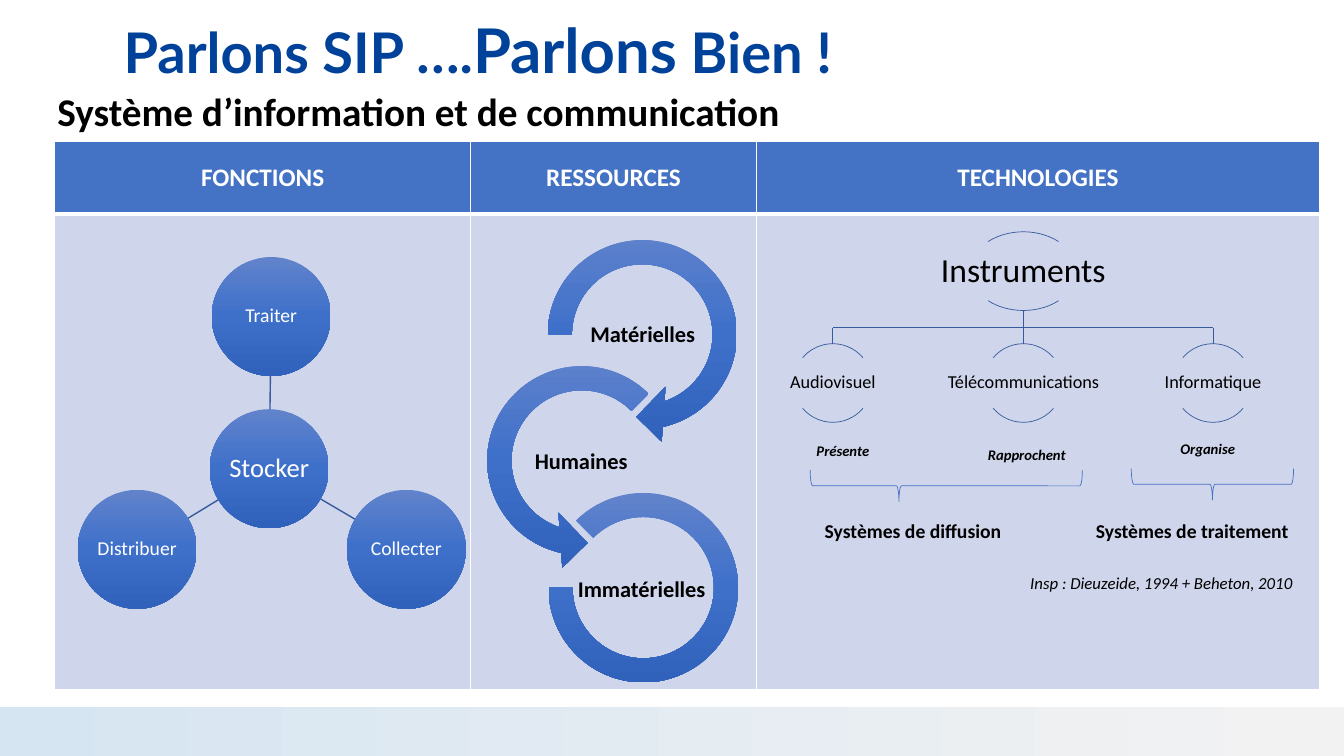
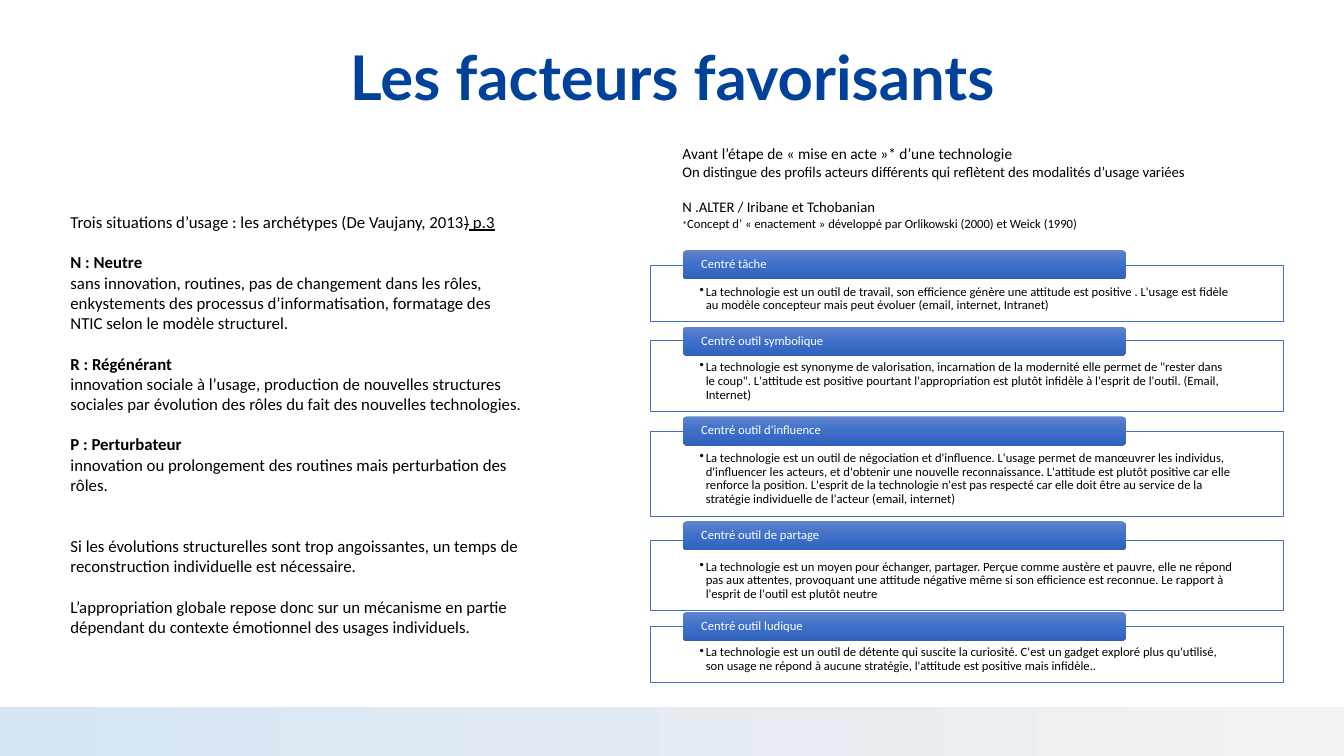
from copy import deepcopy

from lxml import etree
from pptx import Presentation
from pptx.dml.color import RGBColor
from pptx.enum.shapes import MSO_CONNECTOR as CONNECTOR, MSO_SHAPE as SHAPE
from pptx.enum.text import MSO_ANCHOR as ANCHOR, PP_ALIGN as ALIGN
from pptx.oxml.ns import qn
from pptx.util import Inches, Pt

rgb = RGBColor.from_string
WHITE, BLACK, TITLE_BLUE = "FFFFFF", "000000", "004199"
BLUE, DARK_BLUE, PALE_BLUE = "4472C4", "365B9D", "CFD5EA"
BALL = [(0, "6183CB"), (0.5, "3E70CA"), (1, "3062BB")]
BAND = [(0, "D6E5F2"), (0.98, "F2F2F2")]


def paint(shape, fill=None, line=None, angle=270):
    """Fill with nothing, a colour or a list of gradient stops, and set the outline."""
    shape.shadow.inherit = False
    if fill is None:
        shape.fill.background()
    elif isinstance(fill, str):
        shape.fill.solid()
        shape.fill.fore_color.rgb = rgb(fill)
    else:
        shape.fill.gradient()
        shape.fill.gradient_angle = angle
        stop_list = shape.element.spPr.find(qn("a:gradFill")).find(qn("a:gsLst"))
        while len(stop_list) < len(fill):
            stop_list.insert(1, deepcopy(stop_list[0]))
        for stop, (position, color) in zip(shape.fill.gradient_stops, fill):
            stop.position = position
            stop.color.rgb = rgb(color)
    if line:
        shape.line.color.rgb = rgb(line)
        shape.line.width = Pt(0.5)
    else:
        shape.line.fill.background()


def write(shape, paragraphs, size, color=BLACK, bold=False, italic=False, align=ALIGN.LEFT,
          anchor=ANCHOR.TOP, margins=(0.1, 0.05, 0.1, 0.05), spacing=0.9, font="Calibri"):
    """Write paragraphs, each one a string or a list of run strings."""
    frame = shape.text_frame
    frame.word_wrap = True
    frame.vertical_anchor = anchor
    (frame.margin_left, frame.margin_top,
     frame.margin_right, frame.margin_bottom) = map(Inches, margins)
    for index, runs in enumerate(paragraphs):
        paragraph = frame.add_paragraph() if index else frame.paragraphs[0]
        paragraph.alignment = align
        paragraph.line_spacing = spacing
        for text in [runs] if isinstance(runs, str) else runs:
            run = paragraph.add_run()
            run.text = text
            run.font.name = font
            run.font.size = Pt(size)
            run.font.bold = bold
            run.font.italic = italic
            run.font.color.rgb = rgb(color)
    return frame.paragraphs


presentation = Presentation()
presentation.slide_width = Inches(13.33)
presentation.slide_height = Inches(7.5)

# Shared title and bottom band
slides, titles = [], []
for left, top, title in [
    (-1.01, -0.19, ["Parlons SIP ….", "Parlons", " Bien !"]),
    (0.92, 0.07, "Les facteurs favorisants"),
]:
    slide = presentation.slides.add_slide(presentation.slide_layouts[6])
    box = slide.shapes.add_textbox(Inches(left), Inches(top), Inches(11.5), Inches(1.45))
    titles.append(write(box, [title], 44, TITLE_BLUE, bold=True, align=ALIGN.CENTER,
                        anchor=ANCHOR.MIDDLE, font="Lato")[0])
    band = slide.shapes.add_shape(SHAPE.RECTANGLE, 0, Inches(7.01),
                                  Inches(13.33), Inches(0.49))
    paint(band, BAND, angle=0)
    slides.append(slide)
system_slide, factors_slide = slides
for run in titles[0].runs[::2]:
    run.font.size = Pt(40)

# Slide 1: subtitle and table
shapes = system_slide.shapes
subtitle = shapes.add_textbox(Inches(0.47), Inches(0.87), Inches(10.02), Inches(0.53))
write(subtitle, ["Système d’information et de communication"], 28, bold=True)

table = shapes.add_table(2, 3, Inches(0.54), Inches(1.4), Inches(12.55), Inches(5.44)).table
for row, height in zip(table.rows, (0.72, 4.72)):
    row.height = Inches(height)
for column, width in zip(table.columns, (4.13, 2.83, 5.59)):
    column.width = Inches(width)
for row_index, (fill, thick_side) in enumerate([(BLUE, "lnB"), (PALE_BLUE, "lnT")]):
    for cell in table.rows[row_index].cells:
        properties = cell._tc.get_or_add_tcPr()
        for side in ("lnL", "lnR", "lnT", "lnB"):
            border = etree.SubElement(properties, qn(f"a:{side}"))
            border.set("w", str(Pt(3 if side == thick_side else 1)))
            solid = etree.SubElement(border, qn("a:solidFill"))
            etree.SubElement(solid, qn("a:srgbClr")).set("val", WHITE)
        cell.fill.solid()
        cell.fill.fore_color.rgb = rgb(fill)
for cell, heading in zip(table.rows[0].cells, ("FONCTIONS", "RESSOURCES", "TECHNOLOGIES")):
    cell.vertical_anchor = ANCHOR.MIDDLE
    paragraph = cell.text_frame.paragraphs[0]
    paragraph.text = heading
    paragraph.alignment = ALIGN.CENTER
    font = paragraph.runs[0].font
    font.name, font.size, font.bold = "Calibri", Pt(18), True
    font.color.rgb = rgb(WHITE)

# Links of the functions and of the instrument tree
hub = (2.67, 4.65)
functions = [("Traiter", 2.69, 3.14), ("Collecter", 4.03, 5.45), ("Distribuer", 1.36, 5.45)]
tree_left, tree_middle, tree_right = 8.26, 10.15, 12.03
links = [(*hub, x, y, 1) for _, x, y in functions] + [
    (tree_middle, 3.08, tree_middle, 3.41, 0.5),
    (tree_left, 3.25, tree_right, 3.25, 0.5),
    (tree_left, 3.25, tree_left, 3.41, 0.5),
    (tree_right, 3.25, tree_right, 3.41, 0.5),
]
for *ends, width in links:
    link = shapes.add_connector(CONNECTOR.STRAIGHT, *map(Inches, ends))
    link.line.color.rgb = rgb(DARK_BLUE)
    link.line.width = Pt(width)
    etree.SubElement(link.element.spPr, qn("a:effectLst"))

# Functions
centred = {"align": ALIGN.CENTER, "anchor": ANCHOR.MIDDLE, "margins": (0.01,) * 4}
diameter = 1.18
for name, x, y, size in [("Stocker", *hub, 19)] + [(*item, 14) for item in functions]:
    ball = shapes.add_shape(SHAPE.OVAL, Inches(x - diameter / 2), Inches(y - diameter / 2),
                            Inches(diameter), Inches(diameter))
    paint(ball, BALL)
    write(ball, [name], size, WHITE, **centred)

# Resources
for name, kind, left, top, side, adjustments, label_left, label_top, label_width in [
    ("Matérielles", SHAPE.CIRCULAR_ARROW, 5.28, 2.23, 2.18,
     (0.11, 11.423, 45, 108, 0.125), 5.77, 3.02, 1.21),
    ("Humaines", SHAPE.LEFT_CIRCULAR_ARROW, 4.68, 3.48, 2.18,
     (0.11, 11.423, 63, 189, 0.125), 5.16, 4.28, 1.21),
    ("Immatérielles", SHAPE.BLOCK_ARC, 5.44, 4.89, 1.88,
     (135, 108, 0.127), 5.66, 5.55, 1.41),
]:
    ring = shapes.add_shape(kind, Inches(left), Inches(top), Inches(side), Inches(side))
    for index, value in enumerate(adjustments):
        ring.adjustments[index] = value
    paint(ring, BALL)
    label = shapes.add_textbox(Inches(label_left), Inches(label_top),
                               Inches(label_width), Inches(0.61))
    write(label, [name], 16, bold=True, **centred)

# Instruments
for name, x, top, width, label_width, size in [
    ("Instruments", tree_middle, 2.3, 1.06, 2.13, 24),
    ("Audiovisuel", tree_left, 3.41, 0.78, 1.56, 13),
    ("Télécommunications", tree_middle, 3.41, 0.78, 1.56, 13),
    ("Informatique", tree_right, 3.41, 0.78, 1.56, 13),
]:
    for start, end in [(132, 192), (24, 84)]:
        arc = shapes.add_shape(SHAPE.ARC, Inches(x - width / 2), Inches(top),
                               Inches(width), Inches(0.78))
        arc.adjustments[0], arc.adjustments[1] = start, end
        paint(arc, line=DARK_BLUE)
    label = shapes.add_textbox(Inches(x - label_width / 2), Inches(top + 0.14),
                               Inches(label_width), Inches(0.5))
    write(label, [name], size, **centred)

# Captions and braces
for text, left, top, width, height, size, bold, italic in [
    ("Présente", 8, 4.35, 1.33, 0.3, 10.5, True, True),
    ("Rapprochent", 9.7, 4.39, 1.33, 0.3, 10.5, True, True),
    ("Organise", 11.61, 4.33, 1.33, 0.3, 10.5, True, True),
    ("Systèmes de diffusion", 8.08, 5.12, 2.41, 0.25, 14, True, False),
    ("Systèmes de traitement", 10.77, 5.12, 2.41, 0.25, 14, True, False),
    ("Insp : Dieuzeide, 1994 + Beheton, 2010", 10.12, 5.66, 3.1, 0.39, 12, False, True),
]:
    caption = shapes.add_textbox(Inches(left), Inches(top), Inches(width), Inches(height))
    write(caption, [text], size, bold=bold, italic=italic)
for left, top, length, tip in [(9.23, 3.47, 2.7, 0.674), (11.87, 4, 1.61, 0.5)]:
    brace = shapes.add_shape(SHAPE.RIGHT_BRACE, Inches(left), Inches(top),
                             Inches(0.31), Inches(length))
    brace.rotation = 90
    brace.adjustments[0], brace.adjustments[1] = 0.083, tip
    paint(brace, line=BLUE)

# Slide 2: introduction to the user profiles
shapes = factors_slide.shapes
intro = shapes.add_textbox(Inches(6.67), Inches(1.38), Inches(6.5), Inches(1.1))
lines = write(intro, [
    "Avant l’étape de « mise en acte »* d’une technologie",
    "On distingue des profils acteurs différents qui reflètent des modalités d’usage variées",
    "N .ALTER / Iribane et Tchobanian",
    ["*", "Concept d’ « enactement » développé par Orlikowski (2000) et Weick (1990)"],
], 10.5, spacing=1)
lines[0].runs[0].font.size = Pt(11)
lines[2].space_before = Pt(12.8)
lines[3].runs[0].font.size = Pt(7)
lines[3].runs[1].font.size = Pt(9)

# Profiles: a framed description under a heading tab
for name, tab_top, top, height, description in [
    ("Centré tâche", 2.48, 2.63, 0.56,
     "La technologie est un outil de travail, son efficience génère une attitude est "
     "positive . L'usage est fidèle au modèle concepteur mais peut évoluer (email, "
     "internet, Intranet)"),
    ("Centré outil symbolique", 3.24, 3.38, 0.7,
     "La technologie est synonyme de valorisation, incarnation de la modernité elle permet "
     "de \"rester dans le coup\". L'attitude est positive pourtant l'appropriation est "
     "plutôt infidèle à l'esprit de l'outil. (Email, Internet)"),
    ("Centré outil d'influence", 4.13, 4.28, 0.84,
     "La technologie est un outil de négociation et d'influence. L'usage permet de "
     "manœuvrer les individus, d'influencer les acteurs, et d'obtenir une nouvelle "
     "reconnaissance. L'attitude est plutôt positive car elle renforce la position. "
     "L'esprit de la technologie n'est pas respecté car elle doit être au service de la "
     "stratégie individuelle de l'acteur (email, internet)"),
    ("Centré outil de partage", 5.17, 5.36, 0.7,
     "La technologie est un moyen pour échanger, partager. Perçue comme austère et pauvre, "
     "elle ne répond pas aux attentes, provoquant une attitude négative même si son "
     "efficience est reconnue. Le rapport à l'esprit de l'outil est plutôt neutre"),
    ("Centré outil ludique", 6.07, 6.21, 0.56,
     "La technologie est un outil de détente qui suscite la curiosité. C'est un gadget "
     "exploré plus qu'utilisé, son usage ne répond à aucune stratégie, l'attitude est "
     "positive mais infidèle.."),
]:
    frame_box = shapes.add_shape(SHAPE.RECTANGLE, Inches(6.45), Inches(top),
                                 Inches(6.28), Inches(height))
    paint(frame_box, WHITE, BLUE)
    paragraph = write(frame_box, [description], 9, margins=(0.49, 0.2, 0.49, 0.07))[0]
    properties = paragraph._p.get_or_add_pPr()
    properties.set("marL", str(Inches(0.06)))
    properties.set("indent", str(-Inches(0.06)))
    etree.SubElement(properties, qn("a:buChar")).set("char", "•")
    tab = shapes.add_shape(SHAPE.ROUNDED_RECTANGLE, Inches(6.77), Inches(tab_top),
                           Inches(4.4), Inches(0.29))
    paint(tab, BALL)
    write(tab, [name], 9, WHITE, anchor=ANCHOR.MIDDLE, margins=(0.17, 0, 0.17, 0))

# Usage archetypes
archetypes = shapes.add_textbox(Inches(0.6), Inches(2.05), Inches(4.68), Inches(4.9))
lines = write(archetypes, [
    ["Trois situations d’usage : les archétypes (De Vaujany, 2013", ")", " p.3"],
    "N : Neutre",
    "sans innovation, routines, pas de changement dans les rôles, enkystements des processus "
    "d’informatisation, formatage des NTIC selon le modèle structurel.",
    "R : Régénérant",
    "innovation sociale à l’usage, production de nouvelles structures sociales par évolution "
    "des rôles du fait des nouvelles technologies.",
    "P : Perturbateur",
    "innovation ou prolongement des routines mais perturbation des rôles.",
    "Si les évolutions structurelles sont trop angoissantes, un temps de reconstruction "
    "individuelle est nécessaire.",
    "L’appropriation globale repose donc sur un mécanisme en partie dépendant du contexte "
    "émotionnel des usages individuels.",
], 12, spacing=1)
lines[0].runs[1]._r.get_or_add_rPr().set("strike", "sngStrike")
lines[0].runs[2].font.underline = True
for index in (1, 3, 5):
    lines[index].runs[0].font.bold = True
for index, gap in [(1, 14.6), (3, 14.6), (5, 14.6), (7, 29.2), (8, 14.6)]:
    lines[index].space_before = Pt(gap)

presentation.save("out.pptx")
